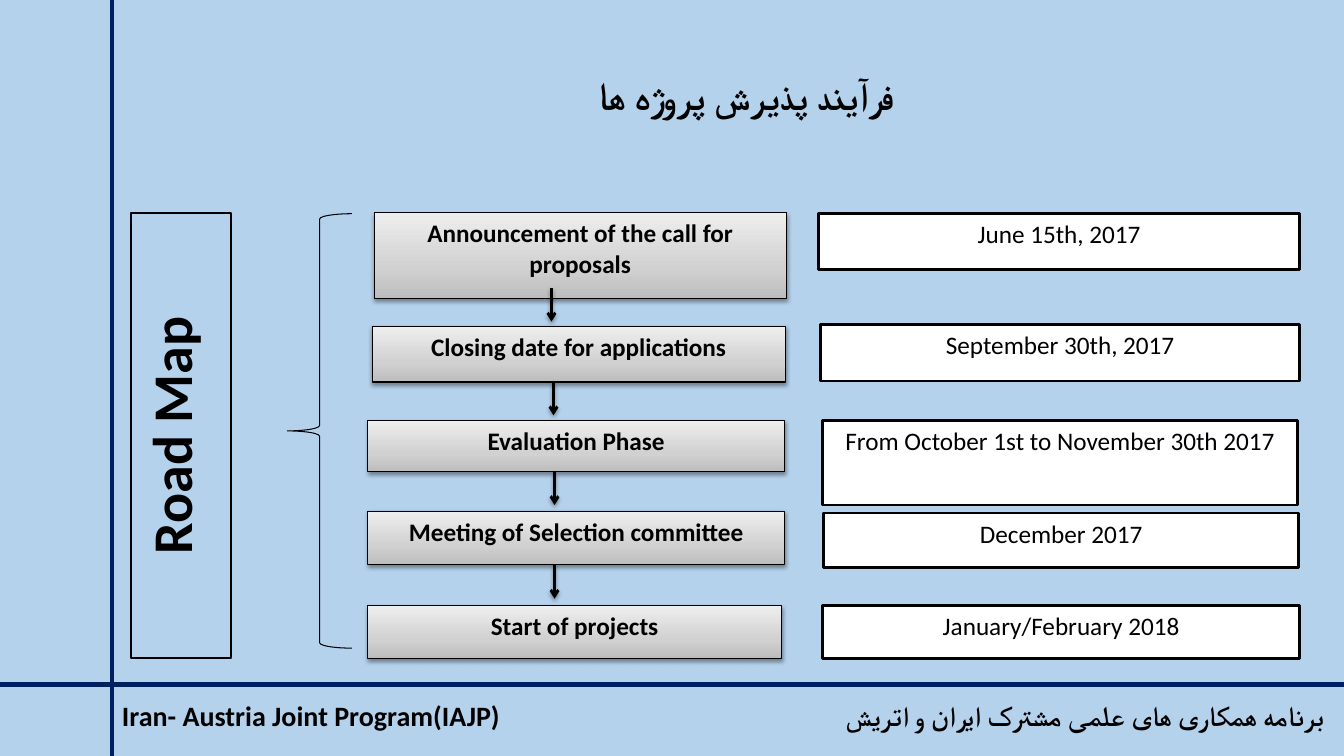
from typing import NamedTuple

from lxml import etree
from pptx import Presentation
from pptx.dml.color import RGBColor
from pptx.enum.shapes import MSO_CONNECTOR, MSO_SHAPE
from pptx.enum.text import MSO_ANCHOR, PP_ALIGN
from pptx.oxml.ns import qn
from pptx.util import Emu, Pt

RECT = MSO_SHAPE.RECTANGLE
BRACE = MSO_SHAPE.LEFT_BRACE
STRAIGHT = MSO_CONNECTOR.STRAIGHT
CENTER = PP_ALIGN.CENTER
TOP, MIDDLE = MSO_ANCHOR.TOP, MSO_ANCHOR.MIDDLE

PX = 9144  # 100 px to the inch
WIDE, HIGH = 1333, 750
FONT = "Calibri"
BLACK, WHITE, NAVY, SKY = "000000", "FFFFFF", "002060", "B5D2EC"
GRADE = ((0, "BDBDBD"), (35, "D1D1D1"), (100, "EEEEEE"))
DROP = 33  # arrow length


class Box(NamedTuple):
    text: str
    left: int
    top: int
    width: int
    height: int


class Line(NamedTuple):
    x1: int
    y1: int
    x2: int
    y2: int


STEPS = [
    Box("Announcement of the call for proposals", 371, 211, 409, 85),
    Box("Closing date for applications", 369, 324, 410, 55),
    Box("Evaluation Phase", 365, 417, 413, 51),
    Box("Meeting of Selection committee", 365, 507, 413, 53),
    Box("Start of projects", 365, 601, 410, 52),
]
DATES = [
    Box("June 15th, 2017", 812, 212, 477, 55),
    Box("September 30th, 2017", 814, 322, 475, 56),
    Box("From October 1st to November 30th 2017", 816, 417, 471, 84),
    Box("December 2017", 817, 509, 471, 54),
    Box("January/February 2018", 816, 601, 473, 52),
]
ARROWS = [Line(x, y, x, y + DROP)
          for x, y in ((547, 286), (549, 379), (550, 468), (550, 561))]
RULES = [Line(111, 0, 111, HIGH), Line(WIDE, 679, 0, 679)]
ROAD = Box("Road Map", 130, 211, 99, 442)
CURVE = Box("", 285, 212, 64, 431)
TITLE = Box("فرآیند پذیرش پروژه ها", 147, 66, 1186, 57)
FOOTS = [
    Box("برنامه همکاری های علمی مشترک ایران و اتریش", 827, 690, 498, 40),
    Box("Iran- Austria Joint Program(IAJP)", 106, 690, 405, 40),
]


def px(size: int) -> Emu:
    return Emu(size * PX)


def color(code: str) -> RGBColor:
    return RGBColor.from_string(code)


def node(parent, tag: str, **attrs: str):
    return etree.SubElement(parent, qn(tag), attrs)


def shade(effects) -> None:
    """Fill an effect list with the soft drop shadow."""
    drop = node(effects, "a:outerShdw", blurRad="39370", dist="20320",
                dir="5400000", rotWithShape="0")
    tint = node(drop, "a:srgbClr", val=BLACK)
    node(tint, "a:alpha", val="38000")


def write(shape, text: str, size: int, bold: bool, rtl: bool = False,
          anchor=TOP) -> None:
    frame = shape.text_frame
    frame.word_wrap = True
    frame.vertical_anchor = anchor
    frame.text = text
    para = frame.paragraphs[0]
    para.alignment = CENTER
    if rtl:
        para._p.get_or_add_pPr().set("rtl", "1")
    run = para.runs[0]
    run.font.name = FONT
    run.font.size = Pt(size)
    run.font.bold = bold
    run.font.color.rgb = color(BLACK)
    node(run._r.get_or_add_rPr(), "a:cs", typeface=FONT)


def block(slide, box: Box, kind, weight: float):
    """Add an unfilled shape with a black outline."""
    shape = slide.shapes.add_shape(kind, *map(px, box[1:]))
    shape.shadow.inherit = False
    shape.fill.background()
    shape.line.color.rgb = color(BLACK)
    shape.line.width = Pt(weight)
    return shape


def step(slide, box: Box) -> None:
    shape = block(slide, box, RECT, 0.75)
    shape.fill.gradient()
    shape.fill.gradient_angle = 90
    props = shape._element.spPr
    stops = props.find(".//" + qn("a:gsLst"))
    for stop in list(stops):
        stops.remove(stop)
    for place, code in GRADE:
        stop = node(stops, "a:gs", pos=str(place * 1000))
        node(stop, "a:srgbClr", val=code)
    shade(props.find(qn("a:effectLst")))
    write(shape, box.text, 18, True)


def date(slide, box: Box) -> None:
    shape = block(slide, box, RECT, 2)
    shape.fill.solid()
    shape.fill.fore_color.rgb = color(WHITE)
    write(shape, box.text, 18, False)


def label(slide, box: Box, size: int, anchor) -> None:
    shape = slide.shapes.add_textbox(*map(px, box[1:]))
    write(shape, box.text, size, True, True, anchor)


def rule(slide, line: Line, code: str, weight: float, arrow: bool) -> None:
    link = slide.shapes.add_connector(STRAIGHT, *map(px, line))
    link.line.color.rgb = color(code)
    link.line.width = Pt(weight)
    props = link._element.spPr
    effects = node(props, "a:effectLst")
    if arrow:
        node(props.find(qn("a:ln")), "a:tailEnd", type="arrow")
        shade(effects)


def main() -> None:
    deck = Presentation()
    deck.slide_width, deck.slide_height = px(WIDE), px(HIGH)
    slide = deck.slides.add_slide(deck.slide_layouts[6])
    slide.background.fill.solid()
    slide.background.fill.fore_color.rgb = color(SKY)

    # Frame lines and footer
    for line in RULES:
        rule(slide, line, NAVY, 3, False)
    for foot in FOOTS:
        label(slide, foot, 20, MIDDLE)

    # Steps and their dates
    for box in STEPS:
        step(slide, box)
    for box in DATES:
        date(slide, box)
    for line in ARROWS:
        rule(slide, line, BLACK, 2, True)

    # Road map bar and brace
    block(slide, CURVE, BRACE, 0.75)
    road = block(slide, ROAD, RECT, 1.5)
    write(road, ROAD.text, 40, True, True)
    road.text_frame._txBody.bodyPr.set("vert", "vert270")

    # Title
    label(slide, TITLE, 28, TOP)
    deck.save("out.pptx")


if __name__ == "__main__":
    main()
